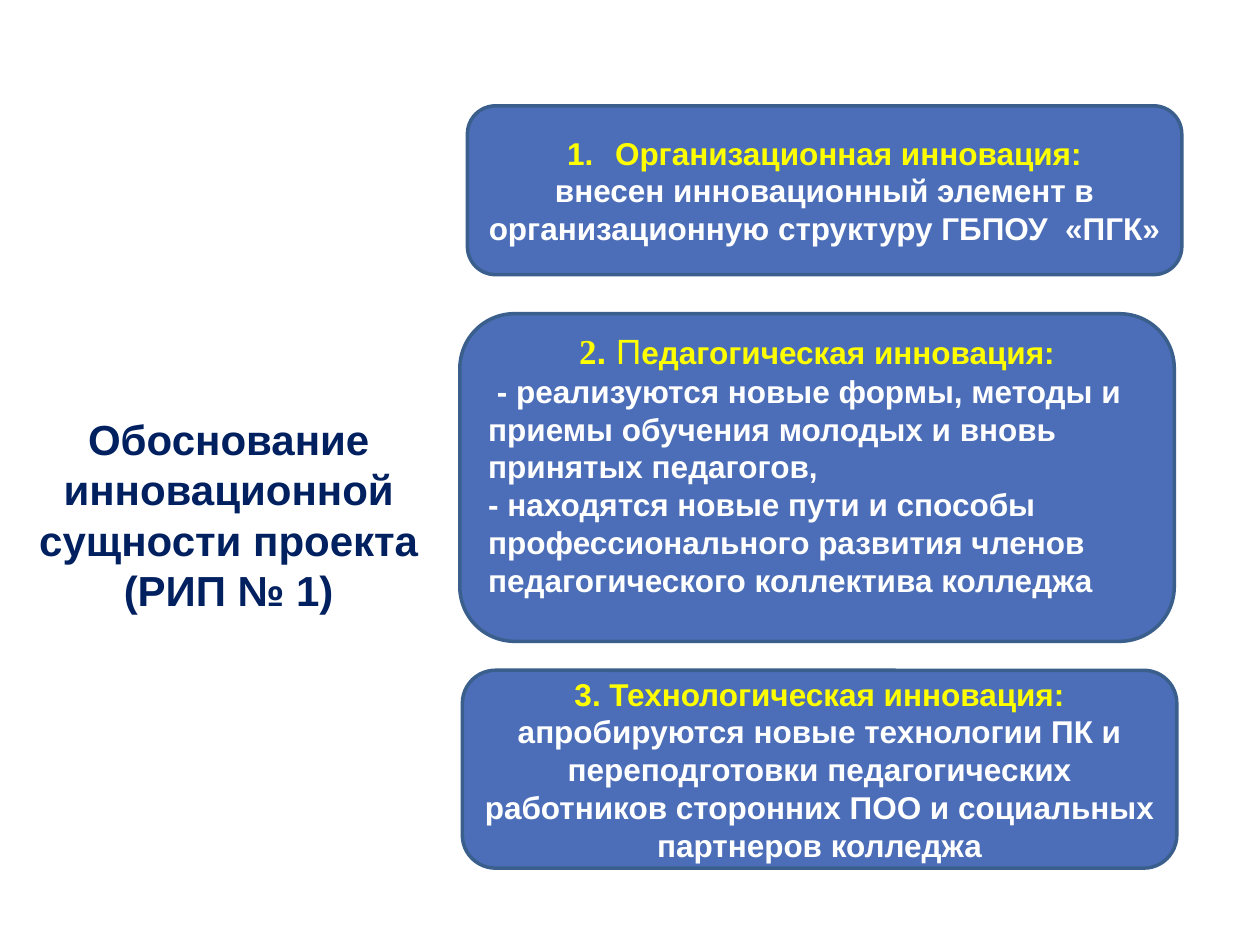
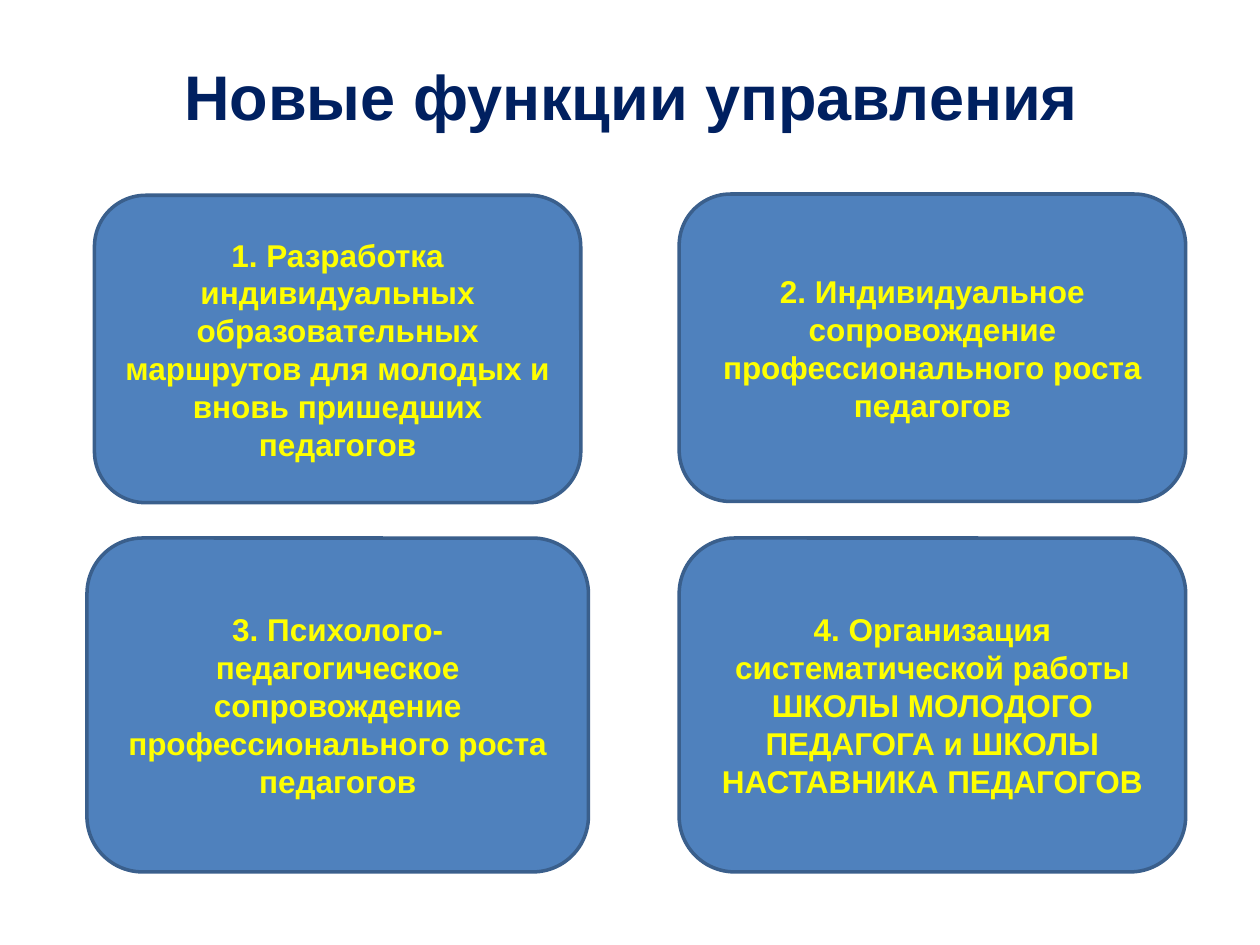
from dataclasses import dataclass

import pptx
import pptx.dml.color
import pptx.enum.shapes
import pptx.enum.text
import pptx.oxml.ns
import pptx.presentation
import pptx.slide
import pptx.text.text
import pptx.util
from lxml import etree
from pptx.util import Inches

ALIGN = pptx.enum.text.PP_ALIGN
ANCHOR = pptx.enum.text.MSO_ANCHOR
TITLE_ONLY = 5


@dataclass(frozen=True)
class Theme:
    heading: str = "002060"
    innovation_fill: str = "4C6EB8"
    function_fill: str = "4F81BD"
    border: str = "3A5F8C"
    accent: str = "FFFF00"
    light: str = "FFFFFF"
    font: str = "Arial"
    serif: str = "Times New Roman"
    side_title_size: int = 24
    title_size: int = 36
    lead_size: int = 20
    card_size: int = 18
    border_width: int = 2


THEME = Theme()


@dataclass(frozen=True)
class Box:
    left: float
    top: float
    width: float
    height: float


@dataclass(frozen=True)
class Span:
    text: str
    color: str = THEME.accent
    size: int = THEME.card_size
    font: str = THEME.font
    bold: bool = True


@dataclass(frozen=True)
class Line:
    spans: tuple[Span, ...]
    align: ALIGN = ALIGN.CENTER
    numbered: bool = False


@dataclass(frozen=True)
class Card:
    box: Box
    lines: tuple[Line, ...]
    from_top: bool = False


def body(text: str, align: ALIGN = ALIGN.CENTER) -> Line:
    return Line((Span(text, THEME.light),), align)


def accent(text: str, numbered: bool = False) -> Line:
    return Line((Span(text),), numbered=numbered)


INNOVATIONS = (
    Card(Box(3.71, 0.84, 5.67, 1.34), (
        accent("Организационная инновация:", numbered=True),
        body("внесен инновационный элемент в организационную структуру ГБПОУ  «ПГК»"),
    )),
    Card(Box(3.65, 2.49, 5.67, 2.6), (
        Line((
            Span("2", size=THEME.lead_size, font=THEME.serif),
            Span(".", size=THEME.lead_size),
            Span(" П", size=THEME.lead_size, bold=False),
            Span("едагогическая инновация:"),
        )),
        body(" - реализуются новые формы, методы и приемы обучения молодых "
             "и вновь принятых педагогов,", ALIGN.LEFT),
        body("- находятся новые пути и способы профессионального развития "
             "членов педагогического коллектива колледжа", ALIGN.LEFT),
    ), from_top=True),
    Card(Box(3.67, 5.32, 5.67, 1.57), (
        Line((
            Span("3. Технологическая инновация: "),
            Span("апробируются новые технологии ПК и переподготовки педагогических "
                 "работников сторонних ПОО и социальных партнеров колледжа", THEME.light),
        )),
    )),
)

FUNCTIONS = (
    Card(Box(0.75, 1.55, 3.86, 2.44), (
        accent("1. Разработка индивидуальных образовательных маршрутов "
               "для молодых и вновь пришедших педагогов"),)),
    Card(Box(5.39, 1.54, 4.02, 2.44), (
        accent("2. Индивидуальное сопровождение профессионального роста педагогов"),)),
    Card(Box(0.69, 4.27, 3.98, 2.65), (
        accent("3. Психолого-педагогическое сопровождение "
               "профессионального роста педагогов"),)),
    Card(Box(5.39, 4.27, 4.02, 2.65), (
        accent("4. Организация систематической работы ШКОЛЫ МОЛОДОГО ПЕДАГОГА "
               "и ШКОЛЫ НАСТАВНИКА ПЕДАГОГОВ"),)),
)


def rgb(value: str) -> pptx.dml.color.RGBColor:
    return pptx.dml.color.RGBColor.from_string(value)


def style_font(font: pptx.text.text.Font, span: Span) -> None:
    font.name = span.font
    font.size = pptx.util.Pt(span.size)
    font.bold = span.bold
    font.color.rgb = rgb(span.color)


def number_paragraph(paragraph: pptx.text.text._Paragraph) -> None:
    properties = paragraph._p.get_or_add_pPr()
    properties.set("marL", str(Inches(0.38)))
    properties.set("indent", str(Inches(-0.38)))
    bullet = etree.SubElement(properties, pptx.oxml.ns.qn("a:buAutoNum"))
    bullet.set("type", "arabicPeriod")


def add_titled_slide(deck: pptx.presentation.Presentation, text: str, box: Box,
                     size: int, anchor: ANCHOR) -> pptx.slide.Slide:
    slide = deck.slides.add_slide(deck.slide_layouts[TITLE_ONLY])
    title = slide.shapes.title
    title.left, title.top = Inches(box.left), Inches(box.top)
    title.width, title.height = Inches(box.width), Inches(box.height)
    frame = title.text_frame
    frame.text = text
    frame.word_wrap = True
    frame.auto_size = pptx.enum.text.MSO_AUTO_SIZE.NONE
    frame.vertical_anchor = anchor
    for paragraph in frame.paragraphs:
        paragraph.alignment = ALIGN.CENTER
        for run in paragraph.runs:
            style_font(run.font, Span(run.text, THEME.heading, size))
    return slide


def draw_card(slide: pptx.slide.Slide, card: Card, fill: str) -> None:
    box = card.box
    panel = slide.shapes.add_shape(
        pptx.enum.shapes.MSO_SHAPE.ROUNDED_RECTANGLE,
        Inches(box.left), Inches(box.top), Inches(box.width), Inches(box.height))
    panel.shadow.inherit = False
    panel.fill.solid()
    panel.fill.fore_color.rgb = rgb(fill)
    panel.line.color.rgb = rgb(THEME.border)
    panel.line.width = pptx.util.Pt(THEME.border_width)
    frame = panel.text_frame
    frame.word_wrap = True
    frame.vertical_anchor = ANCHOR.TOP if card.from_top else ANCHOR.MIDDLE
    if card.from_top:
        frame.margin_top = Inches(0)
    for index, line in enumerate(card.lines):
        paragraph = frame.add_paragraph() if index else frame.paragraphs[0]
        paragraph.alignment = line.align
        if line.numbered:
            number_paragraph(paragraph)
        for span in line.spans:
            run = paragraph.add_run()
            run.text = span.text
            style_font(run.font, span)


def main() -> None:
    deck = pptx.Presentation()
    deck.slide_width, deck.slide_height = Inches(10), Inches(7.5)

    rationale = add_titled_slide(
        deck, "Обоснование инновационной сущности проекта\n(РИП № 1)",
        Box(0.12, 3.23, 3.39, 2.09), THEME.side_title_size, ANCHOR.TOP)
    for innovation in INNOVATIONS:
        draw_card(rationale, innovation, THEME.innovation_fill)

    management = add_titled_slide(
        deck, "Новые функции управления",
        Box(0.51, 0.13, 9, 1.25), THEME.title_size, ANCHOR.MIDDLE)
    for function in FUNCTIONS:
        draw_card(management, function, THEME.function_fill)

    deck.save("out.pptx")


if __name__ == "__main__":
    main()
